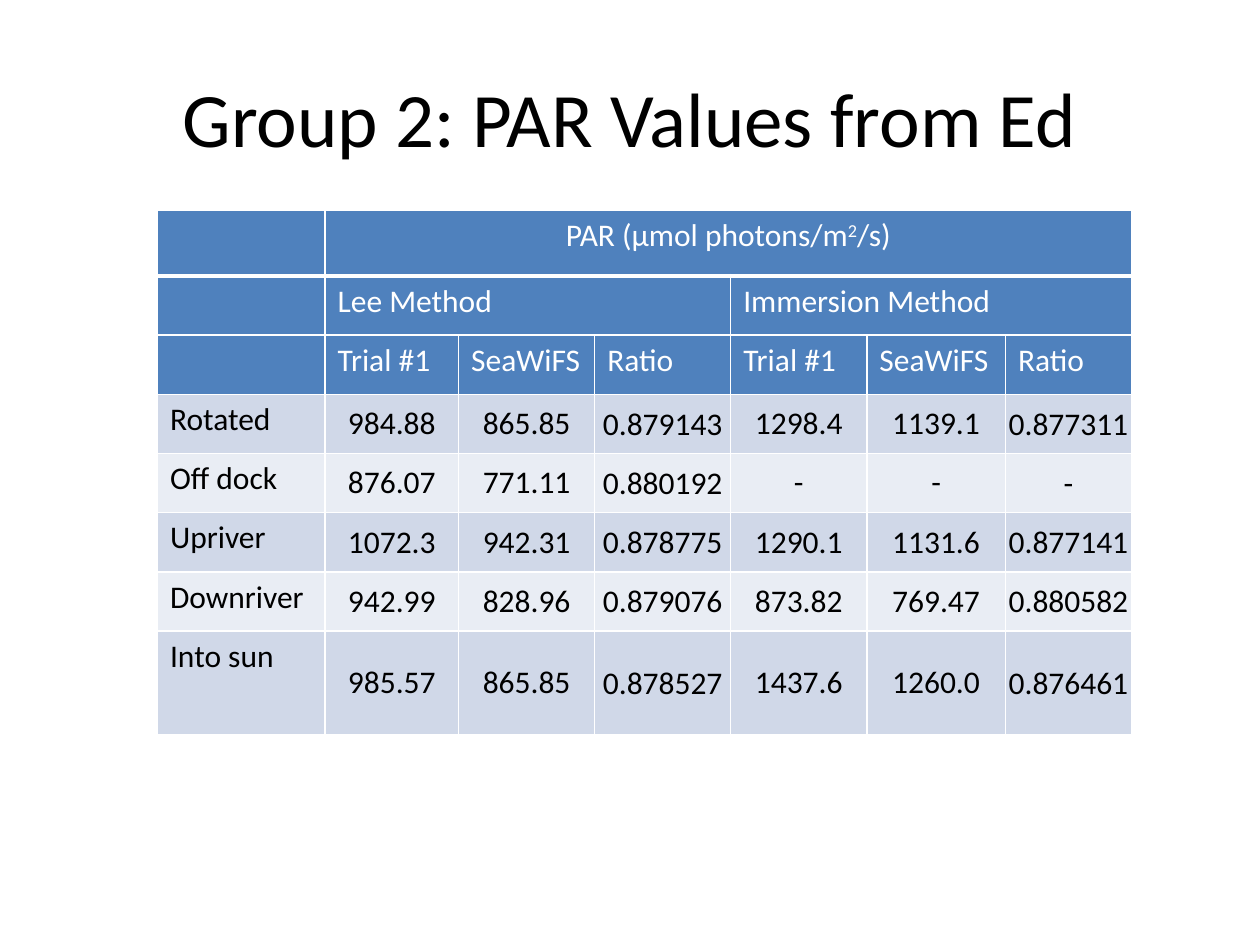
from dataclasses import dataclass

from lxml.etree import SubElement
from pptx import Presentation
from pptx.dml.color import RGBColor
from pptx.enum.text import MSO_ANCHOR, PP_ALIGN
from pptx.oxml.ns import qn
from pptx.util import Inches, Pt

WHITE, BLACK = "FFFFFF", "000000"
HEADER_FILL = "4F81BD"
BAND_FILLS = ("D0D8E8", "E9EDF4")
COLUMN_WIDTHS = [1.33, 1.06, 1.08, 1.08, 1.08, 1.1, 1]
ROW_HEIGHTS = [0.52] + [0.47] * 6 + [0.82]
RATIO_COLUMNS = (3, 6)
RATIO_MARGINS = {
    "margin_left": Inches(0.01),
    "margin_top": Inches(0.01),
    "margin_right": Inches(0.01),
    "margin_bottom": 0,
}


@dataclass
class Header:
    row: int
    col: int
    text: str
    span: int = 1
    align: PP_ALIGN = PP_ALIGN.LEFT


@dataclass
class Station:
    name: str
    values: list[str]


HEADERS = [
    Header(0, 1, "PAR (μmol photons/m^2^/s)", 6, PP_ALIGN.CENTER),
    Header(1, 1, "Lee Method", 3),
    Header(1, 4, "Immersion Method", 3),
] + [
    Header(2, first + i, text)
    for first in (1, 4)
    for i, text in enumerate(("Trial #1", "SeaWiFS", "Ratio"))
]

STATIONS = [
    Station("Rotated", ["984.88", "865.85", "0.879143", "1298.4", "1139.1", "0.877311"]),
    Station("Off dock", ["876.07", "771.11", "0.880192", "-", "-", "-"]),
    Station("Upriver", ["1072.3", "942.31", "0.878775", "1290.1", "1131.6", "0.877141"]),
    Station("Downriver", ["942.99", "828.96", "0.879076", "873.82", "769.47", "0.880582"]),
    Station("Into sun", ["985.57", "865.85", "0.878527", "1437.6", "1260.0", "0.876461"]),
]


def rgb(color: str) -> RGBColor:
    return RGBColor.from_string(color)


def apply(obj, fmt: dict) -> None:
    for name, value in fmt.items():
        setattr(obj, name, value)


def write(p, text: str, size: float, color: str, align: PP_ALIGN) -> None:
    p.alignment = align
    for i, part in enumerate(text.split("^")):
        r = p.add_run()
        r.text = part
        apply(r.font, {"name": "Calibri", "size": Pt(size)})
        r.font.color.rgb = rgb(color)
        if i % 2:
            r.font._element.set("baseline", "30000")


def style_cell(cell, fill: str, bottom: float = 1) -> None:
    tc_pr = cell._tc.get_or_add_tcPr()
    for tag, width in (("a:lnL", 1), ("a:lnR", 1), ("a:lnT", 1), ("a:lnB", bottom)):
        ln = SubElement(tc_pr, qn(tag), w=str(Pt(width)))
        SubElement(SubElement(ln, qn("a:solidFill")), qn("a:srgbClr"), val=WHITE)
    cell.fill.solid()
    cell.fill.fore_color.rgb = rgb(fill)


def add_header(table, header: Header) -> None:
    cell = table.cell(header.row, header.col)
    if header.span > 1:
        cell.merge(table.cell(header.row, header.col + header.span - 1))
    write(cell.text_frame.paragraphs[0], header.text, 18, WHITE, header.align)


def add_station(table, row: int, station: Station) -> None:
    for col, text in enumerate([station.name] + station.values):
        cell = table.cell(row, col)
        align = PP_ALIGN.CENTER if col else PP_ALIGN.LEFT
        if col:
            cell.vertical_anchor = MSO_ANCHOR.MIDDLE
        if col in RATIO_COLUMNS:
            apply(cell, RATIO_MARGINS)
        write(cell.text_frame.paragraphs[0], text, 18, BLACK, align)


def add_par_table(slide) -> None:
    frame = slide.shapes.add_table(
        len(ROW_HEIGHTS), len(COLUMN_WIDTHS),
        Inches(1.25), Inches(1.67), Inches(7.75), Inches(4.17),
    )
    table = frame.table
    for column, width in zip(table.columns, COLUMN_WIDTHS):
        column.width = Inches(width)
    for i, (row, height) in enumerate(zip(table.rows, ROW_HEIGHTS)):
        row.height = Inches(height)
        fill = HEADER_FILL if i < 3 else BAND_FILLS[(i - 3) % 2]
        for cell in row.cells:
            style_cell(cell, fill, 1 if i else 3)
    for header in HEADERS:
        add_header(table, header)
    for i, station in enumerate(STATIONS, start=3):
        add_station(table, i, station)


def main() -> None:
    prs = Presentation()
    apply(prs, {"slide_width": Inches(10), "slide_height": Inches(7.5)})
    s = prs.slides.add_slide(prs.slide_layouts[5])
    title = s.shapes.title
    apply(title, {"left": Inches(0.5), "top": Inches(0.3),
                  "width": Inches(9), "height": Inches(1.25)})
    tf = title.text_frame
    tf.vertical_anchor = MSO_ANCHOR.MIDDLE
    write(tf.paragraphs[0], "Group 2: PAR Values from Ed", 44, BLACK, PP_ALIGN.CENTER)
    add_par_table(s)
    prs.save("out.pptx")


if __name__ == "__main__":
    main()
